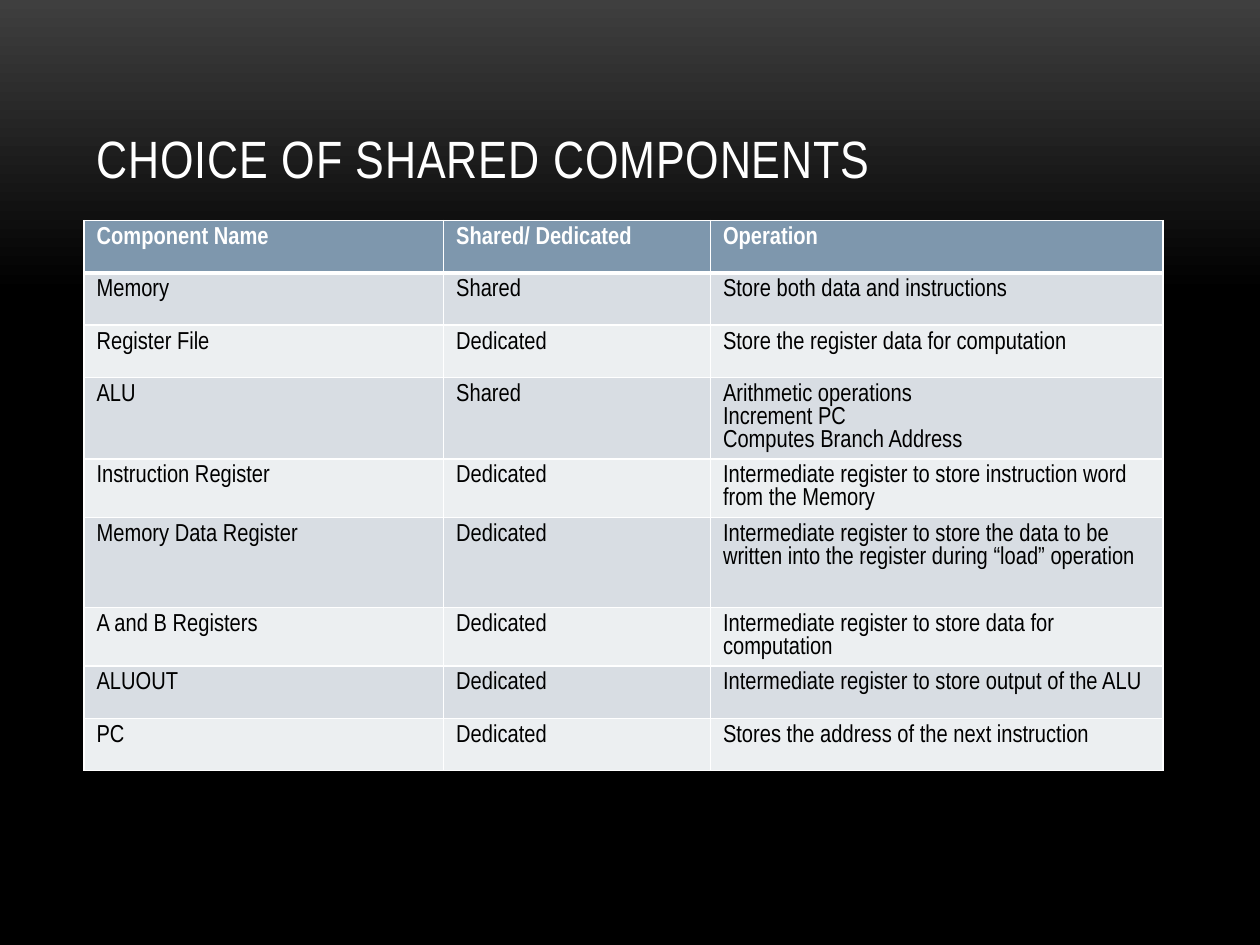
from lxml import etree
from pptx import Presentation
from pptx.dml.color import RGBColor
from pptx.enum.text import MSO_ANCHOR
from pptx.oxml.ns import qn
from pptx.util import Pt

BOTTOM = MSO_ANCHOR.BOTTOM

TITLE = "CHOICE OF SHARED COMPONENTS"
HEADER = ("Component Name", "Shared/ Dedicated", "Operation")
COMPONENTS = [
    ("Memory", "Shared", "Store both data and instructions"),
    ("Register File", "Dedicated", "Store the register data for computation"),
    ("ALU", "Shared", "Arithmetic operations\nIncrement PC\nComputes Branch Address"),
    ("Instruction Register", "Dedicated",
     "Intermediate register to store instruction word from the Memory"),
    ("Memory Data Register", "Dedicated",
     "Intermediate register to store the data to be written into the register "
     "during “load” operation"),
    ("A and B Registers", "Dedicated",
     "Intermediate register to store data for computation"),
    ("ALUOUT", "Dedicated", "Intermediate register to store output of the ALU"),
    ("PC", "Dedicated", "Stores the address of the next instruction"),
]

THEME = {
    "font": "Arial Narrow", "title_size": 30, "table_size": 14, "table_leading": 13.1,
    "white": "FFFFFF", "black": "000000", "glow": "3F3F3F",
    "header": "7E97AD", "bands": ("D8DDE3", "ECEFF1"),
}

LEFT, TABLE_TOP = 48, 126
COLUMN_WIDTHS = (205.5, 152.5, 258.5)
ROW_HEIGHT = 29.92
TALL_ROWS = {"Memory Data Register": 51.5}


def color(name):
    return RGBColor.from_string(THEME.get(name, name))


def add_run(paragraph, text, size, ink, bold=False):
    run = paragraph.add_run()
    run.text = text
    run.font.name = THEME["font"]
    run.font.size = Pt(size)
    run.font.bold = bold
    run.font.color.rgb = color(ink)
    return run


def set_end_size(paragraph, size):
    """Give the paragraph mark the size of its text, so that it does not stretch the row."""
    end = etree.SubElement(paragraph._p, qn("a:endParaRPr"), sz=str(size * 100))
    etree.SubElement(end, qn("a:latin"), typeface=THEME["font"])


def add_borders(cell, bottom_width):
    properties = cell._tc.get_or_add_tcPr()
    for side, width in (("L", 1), ("R", 1), ("T", 1), ("B", bottom_width)):
        line = etree.SubElement(properties, qn(f"a:ln{side}"), w=str(Pt(width)))
        fill = etree.SubElement(line, qn("a:solidFill"))
        etree.SubElement(fill, qn("a:srgbClr"), val=THEME["white"])


def fill_cell(cell, text, fill, ink, bold, bottom_width):
    add_borders(cell, bottom_width)
    cell.fill.solid()
    cell.fill.fore_color.rgb = color(fill)
    frame = cell.text_frame
    for index, line in enumerate(text.split("\n")):
        paragraph = frame.add_paragraph() if index else frame.paragraphs[0]
        paragraph.line_spacing = Pt(THEME["table_leading"])
        add_run(paragraph, line, THEME["table_size"], ink, bold)
        set_end_size(paragraph, THEME["table_size"])


def paint_background(slide):
    fill = slide.background.fill
    fill.gradient()
    fill.gradient_angle = 270
    for stop, (ink, position) in zip(fill.gradient_stops, (("glow", 0), ("black", 0.31))):
        stop.color.rgb = color(ink)
        stop.position = position


def add_title(slide):
    box = slide.shapes.add_textbox(Pt(LEFT), Pt(21.6), Pt(624), Pt(90))
    frame = box.text_frame
    frame.word_wrap = True
    frame.vertical_anchor = BOTTOM
    run = add_run(frame.paragraphs[0], TITLE, THEME["title_size"], "white")
    run.font._element.set("spc", "50")


def add_component_table(slide):
    rows = [HEADER] + COMPONENTS
    heights = [TALL_ROWS.get(row[0], ROW_HEIGHT) for row in rows]
    table = slide.shapes.add_table(
        len(rows), len(HEADER), Pt(LEFT), Pt(TABLE_TOP),
        Pt(sum(COLUMN_WIDTHS)), Pt(sum(heights))).table
    for column, width in zip(table.columns, COLUMN_WIDTHS):
        column.width = Pt(width)
    for index, (row, height) in enumerate(zip(rows, heights)):
        table.rows[index].height = Pt(height)
        if index == 0:
            style = ("header", "white", True, 3)
        else:
            style = (THEME["bands"][(index - 1) % 2], "black", False, 1)
        for column, text in enumerate(row):
            fill_cell(table.cell(index, column), text, *style)


def main():
    deck = Presentation()
    deck.slide_width, deck.slide_height = Pt(720), Pt(540)
    slide = deck.slides.add_slide(deck.slide_layouts[6])
    paint_background(slide)
    add_title(slide)
    add_component_table(slide)
    deck.save("out.pptx")


if __name__ == "__main__":
    main()
